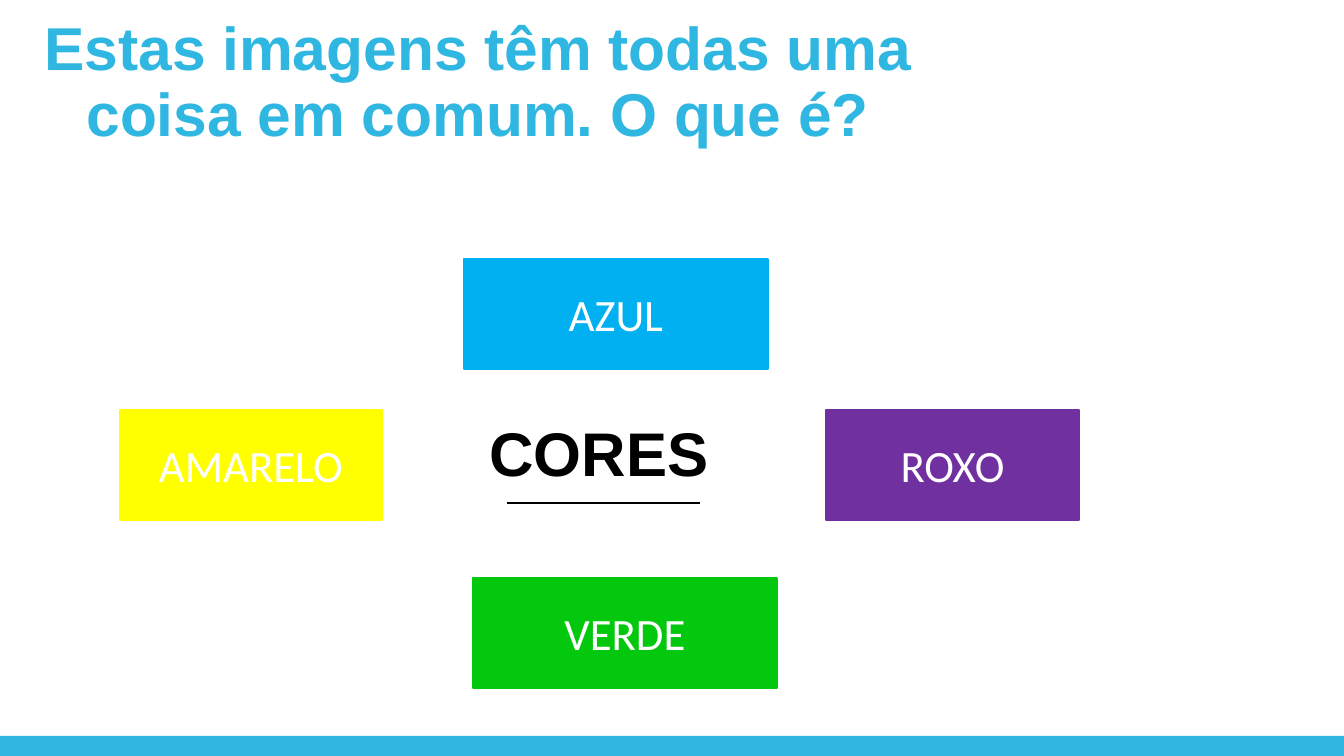
import pptx
import pptx.dml.color
import pptx.enum.shapes
import pptx.enum.text
import pptx.oxml.ns
import pptx.util
import lxml.etree

PX = 914400 / 100.8
COLORS = {
    "title": "30B7E1", "footer": "2FB7E1", "black": "000000", "white": "FFFFFF",
    "blue": "00B0F0", "green": "04C80D", "purple": "7030A0", "yellow": "FFFF00",
}
CARDS = [
    ("AZUL", "blue", (464, 259, 304, 110)),
    ("VERDE", "green", (473, 578, 304, 110)),
    ("ROXO", "purple", (826, 410, 253, 110)),
    ("AMARELO", "yellow", (120, 410, 262, 110)),
]


def px(*lengths):
    return [pptx.util.Emu(round(length * PX)) for length in lengths]


def rgb(name):
    return pptx.dml.color.RGBColor.from_string(COLORS[name])


def write(shape, text, size, font, color, bold=False, anchor="MIDDLE"):
    """Put one centred, wrapped paragraph in the shape and return it."""
    frame = shape.text_frame
    frame.word_wrap = True
    frame.auto_size = pptx.enum.text.MSO_AUTO_SIZE.NONE
    frame.vertical_anchor = pptx.enum.text.MSO_ANCHOR[anchor]
    para = frame.paragraphs[0]
    para.alignment = pptx.enum.text.PP_ALIGN.CENTER
    span = para.add_run()
    span.text = text
    span.font.size = pptx.util.Pt(size)
    span.font.name = font
    span.font.bold = bold
    span.font.color.rgb = rgb(color)
    return para


def add_rectangle(page, box, color):
    shape = page.shapes.add_shape(
        pptx.enum.shapes.MSO_SHAPE.RECTANGLE, *px(*box))
    shape.shadow.inherit = False
    shape.fill.solid()
    shape.fill.fore_color.rgb = rgb(color)
    shape.line.fill.background()
    return shape


def add_card(page, box, text, color):
    card = add_rectangle(page, box, color)
    card.line.color.rgb = rgb(color)
    card.line.width = pptx.util.Pt(1)
    write(card, text, 32, "Calibri", "white")


def add_topic(page, box):
    """Place the central word with the rule below it."""
    left, top, width, height = box
    rule_left, rule_top, rule_width = left + 76, top + 93, 193
    rule = page.shapes.add_connector(
        pptx.enum.shapes.MSO_CONNECTOR.STRAIGHT,
        *px(rule_left, rule_top, rule_left + rule_width, rule_top))
    rule.line.color.rgb = rgb("black")
    rule.line.width = pptx.util.Pt(1.75)
    lxml.etree.SubElement(rule._element.spPr, pptx.oxml.ns.qn("a:effectLst"))
    label = page.shapes.add_textbox(*px(left, top, width, height))
    write(label, "CORES", 44, "Arial", "black", bold=True, anchor="TOP")


def add_title(page, box):
    title = page.shapes.title
    title.left, title.top, title.width, title.height = px(*box)
    para = write(title, "Estas imagens têm todas uma coisa em comum. O que é?",
                 43.2, "Arial", "title", bold=True)
    para.line_spacing = 0.9


def main():
    deck = pptx.Presentation()
    deck.slide_width, deck.slide_height = px(1344, 756)
    page = deck.slides.add_slide(deck.slide_layouts.get_by_name("Title Only"))
    add_rectangle(page, (0, 736, 1344, 20), "footer")
    add_topic(page, (431, 410, 336, 85))
    for text, color, box in CARDS:
        add_card(page, box, text, color)
    add_title(page, (0, 0, 956, 168))
    deck.save("out.pptx")


if __name__ == "__main__":
    main()
